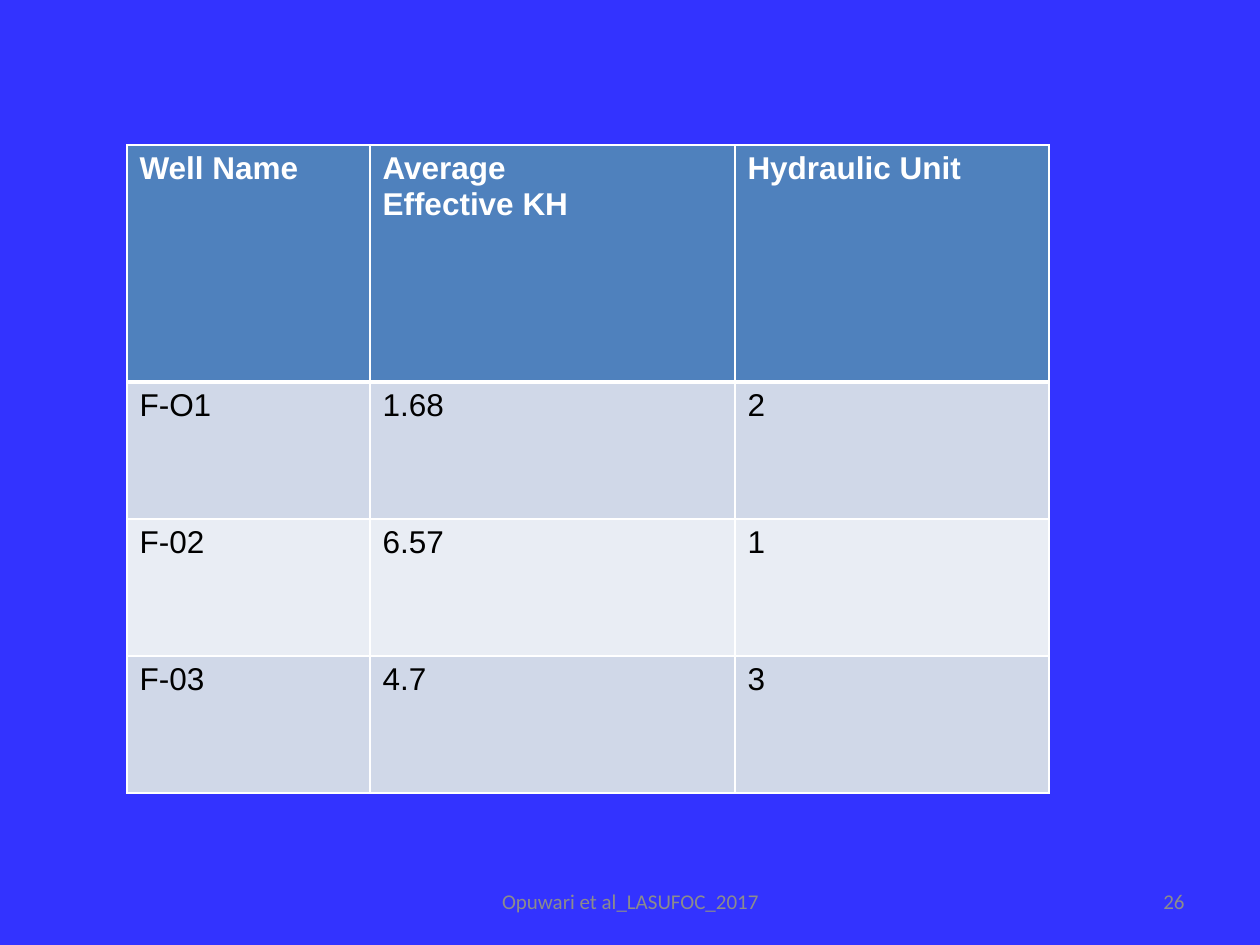
from dataclasses import dataclass

from lxml.etree import SubElement
from pptx import Presentation
from pptx.dml.color import RGBColor
from pptx.enum.text import MSO_ANCHOR as Anchor, PP_ALIGN as Align
from pptx.oxml.ns import qn
from pptx.util import Pt

HEADER = ["Well Name", "Average\nEffective KH", "Hydraulic Unit"]
WELLS = [
    ["F-O1", "1.68", "2"],
    ["F-02", "6.57", "1"],
    ["F-03", "4.7", "3"],
]
TABLE_LEFT, TABLE_TOP = 127, 145
COLUMN_WIDTHS = [243, 365, 314]
HEADER_HEIGHT, WELL_HEIGHT = 237, 137

FOOTER_TOP, FOOTER_HEIGHT = 876, 50
FOOTERS = [  # text, left, width, alignment
    ("Opuwari et al_LASUFOC_2017", 431, 399, Align.CENTER),
    ("26", 903, 294, Align.RIGHT),
]


@dataclass(frozen=True)
class Theme:
    background: str = "3333FF"
    header: str = "4F81BD"
    bands: tuple = ("D0D8E8", "E9EDF4")
    light: str = "FFFFFF"
    dark: str = "000000"
    muted: str = "8C8C8C"
    table_font: str = "Arial"
    footer_font: str = "Calibri"
    table_size: int = 18
    footer_size: int = 12
    thin: int = 1
    thick: int = 3


THEME = Theme()


def px(count):
    return round(count * 914400 / 126)


def color(code):
    return RGBColor.from_string(code)


def paint(fill, code):
    fill.solid()
    fill.fore_color.rgb = color(code)


def write(frame, text, font, size, code, bold=False, align=Align.LEFT):
    """Put each line of text in its own paragraph."""
    for index, line in enumerate(text.split("\n")):
        para = frame.add_paragraph() if index else frame.paragraphs[0]
        para.alignment = align
        span = para.add_run()
        span.text = line
        span.font.name = font
        span.font.size = Pt(size)
        span.font.bold = bold
        span.font.color.rgb = color(code)


def add_borders(cell, top, bottom):
    """Draw the four sides; call before the cell is filled."""
    properties = cell._tc.get_or_add_tcPr()
    sides = {"L": THEME.thin, "R": THEME.thin, "T": top, "B": bottom}
    for side, width in sides.items():
        line = SubElement(properties, qn(f"a:ln{side}"), w=str(Pt(width)))
        solid = SubElement(line, qn("a:solidFill"))
        SubElement(solid, qn("a:srgbClr"), val=THEME.light)


def add_well_table(page):
    rows = [HEADER] + WELLS
    heights = [HEADER_HEIGHT] + [WELL_HEIGHT] * len(WELLS)
    table = page.shapes.add_table(
        len(rows), len(HEADER), px(TABLE_LEFT), px(TABLE_TOP),
        px(sum(COLUMN_WIDTHS)), px(sum(heights))).table
    for column, width in zip(table.columns, COLUMN_WIDTHS):
        column.width = px(width)
    for index, (row, height, texts) in enumerate(zip(table.rows, heights, rows)):
        row.height = px(height)
        is_header = index == 0
        fill = THEME.header if is_header else THEME.bands[(index - 1) % 2]
        for cell, text in zip(row.cells, texts):
            add_borders(cell, THEME.thick if index == 1 else THEME.thin,
                        THEME.thick if is_header else THEME.thin)
            paint(cell.fill, fill)
            write(cell.text_frame, text, THEME.table_font, THEME.table_size,
                  THEME.light if is_header else THEME.dark, bold=is_header)


def add_footer(page, text, left, width, align):
    box = page.shapes.add_textbox(
        px(left), px(FOOTER_TOP), px(width), px(FOOTER_HEIGHT))
    frame = box.text_frame
    frame.word_wrap = True
    frame.vertical_anchor = Anchor.MIDDLE
    write(frame, text, THEME.footer_font, THEME.footer_size, THEME.muted,
          align=align)


def main():
    deck = Presentation()
    deck.slide_width, deck.slide_height = px(1260), px(945)
    page = deck.slides.add_slide(deck.slide_layouts[6])
    paint(page.background.fill, THEME.background)
    for footer in FOOTERS:
        add_footer(page, *footer)
    add_well_table(page)
    deck.save("out.pptx")


if __name__ == "__main__":
    main()
